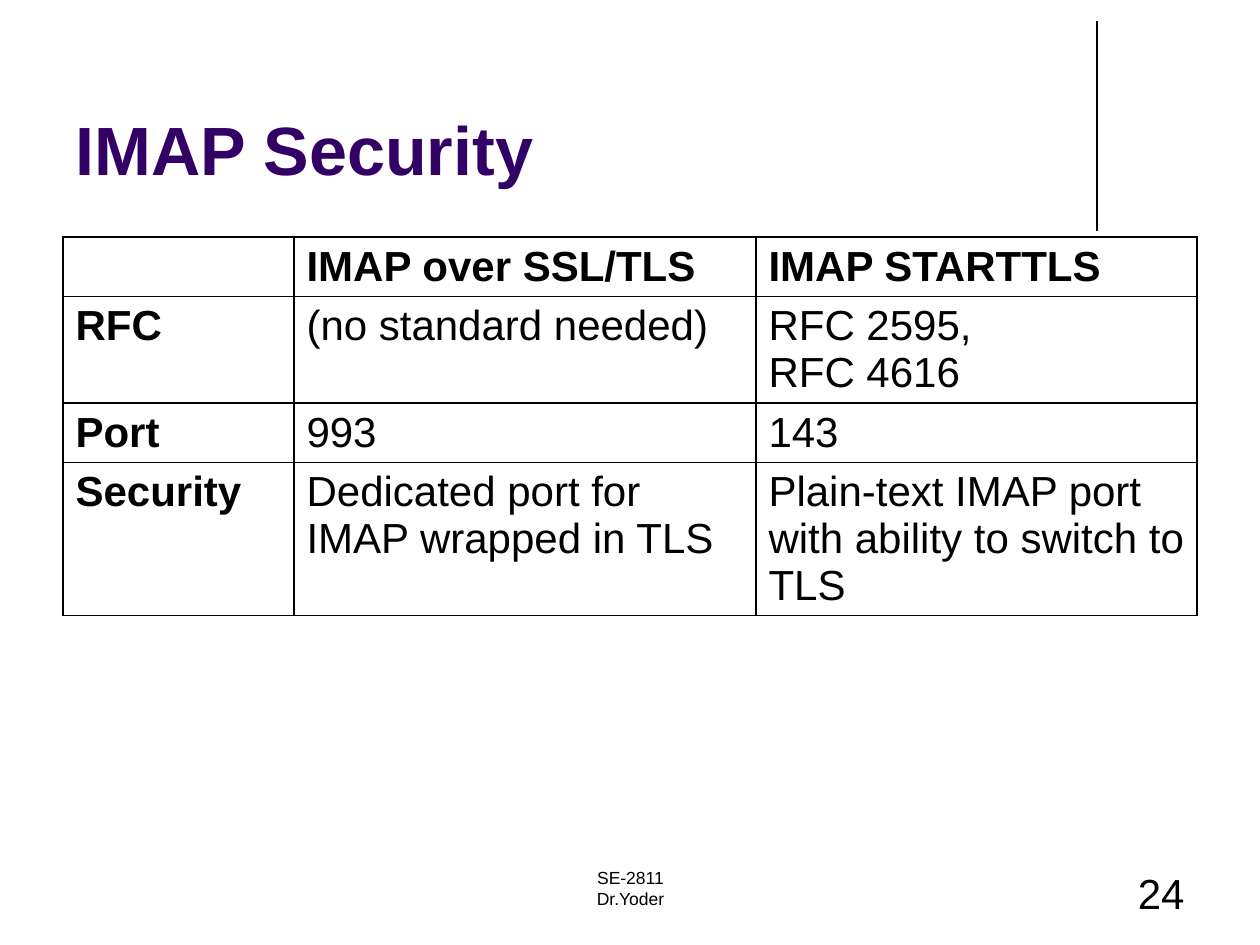
from lxml import etree
from pptx import Presentation
from pptx.dml.color import RGBColor
from pptx.enum.shapes import MSO_CONNECTOR
from pptx.enum.text import MSO_ANCHOR, PP_ALIGN
from pptx.oxml.ns import qn
from pptx.util import Pt

PX = 914400 / 126
STRAIGHT = MSO_CONNECTOR.STRAIGHT
BOTTOM = MSO_ANCHOR.BOTTOM
TOP = MSO_ANCHOR.TOP
LEFT, CENTER, RIGHT = PP_ALIGN.LEFT, PP_ALIGN.CENTER, PP_ALIGN.RIGHT
BLACK = "000000"
PURPLE = "330066"
FONT = "Arial"
TITLE_ONLY = 5

COLUMN_WIDTHS = [231, 462, 441]
ROW_HEIGHT = 52
COMPARISON = [
    ["", "IMAP over SSL/TLS", "IMAP STARTTLS"],
    ["RFC", "(no standard needed)", "RFC 2595, \vRFC 4616"],
    ["Port", "993", "143"],
    ["Security", "Dedicated port for IMAP wrapped in TLS",
     "Plain-text IMAP port with ability to switch to TLS"],
]


def px(length):
    return round(length * PX)


def color(value):
    return RGBColor.from_string(value)


def write_text(frame, text, size=24, fill=BLACK, bold=False, align=LEFT, anchor=TOP):
    frame.word_wrap = True
    frame.vertical_anchor = anchor
    frame.text = text
    for paragraph in frame.paragraphs:
        paragraph.alignment = align
        for run in paragraph.runs:
            run.font.name = FONT
            run.font.size = Pt(size)
            run.font.bold = bold
            run.font.color.rgb = color(fill)


def add_title(slide, left, top, width, height):
    title = slide.shapes.title
    title.left, title.top = px(left), px(top)
    title.width, title.height = px(width), px(height)
    write_text(title.text_frame, "IMAP Security", size=39, fill=PURPLE,
               bold=True, anchor=BOTTOM)


def add_rule(slide, left, top, height):
    rule = slide.shapes.add_connector(
        STRAIGHT, px(left), px(top), px(left), px(top + height))
    rule.line.color.rgb = color(BLACK)
    rule.line.width = Pt(0.75)
    etree.SubElement(rule._element.spPr, qn("a:effectLst"))


def add_borders(cell):
    properties = cell._tc.get_or_add_tcPr()
    for position, side in enumerate(("lnL", "lnR", "lnT", "lnB")):
        border = etree.Element(qn(f"a:{side}"), w=str(Pt(1)))
        solid = etree.SubElement(border, qn("a:solidFill"))
        etree.SubElement(solid, qn("a:srgbClr"), val=BLACK)
        properties.insert(position, border)


def add_comparison(slide, left, top):
    table = slide.shapes.add_table(
        len(COMPARISON), len(COLUMN_WIDTHS), px(left), px(top),
        px(sum(COLUMN_WIDTHS)), px(ROW_HEIGHT * len(COMPARISON))).table
    for column, width in zip(table.columns, COLUMN_WIDTHS):
        column.width = px(width)
    for row_index, texts in enumerate(COMPARISON):
        table.rows[row_index].height = px(ROW_HEIGHT)
        for column_index, text in enumerate(texts):
            cell = table.cell(row_index, column_index)
            cell.fill.background()
            is_heading = row_index == 0 or column_index == 0
            write_text(cell.text_frame, text, bold=is_heading)
            add_borders(cell)


def add_footer(slide, left, top, width, height):
    number_width = 294
    parts = [
        (left, 399, "SE-2811\nDr.Yoder", 10, CENTER),
        (left + width - number_width, number_width, "24", 24, RIGHT),
    ]
    for part_left, part_width, text, size, align in parts:
        box = slide.shapes.add_textbox(
            px(part_left), px(top), px(part_width), px(height))
        write_text(box.text_frame, text, size=size, align=align)


def main():
    presentation = Presentation()
    presentation.slide_width = px(1260)
    presentation.slide_height = px(945)
    slide = presentation.slides.add_slide(presentation.slide_layouts[TITLE_ONLY])
    add_rule(slide, 1097, 21, 210)
    add_title(slide, 63, 16, 1040, 179)
    add_comparison(slide, 63, 237)
    add_footer(slide, 431, 861, 766, 63)
    presentation.save("out.pptx")


if __name__ == "__main__":
    main()
